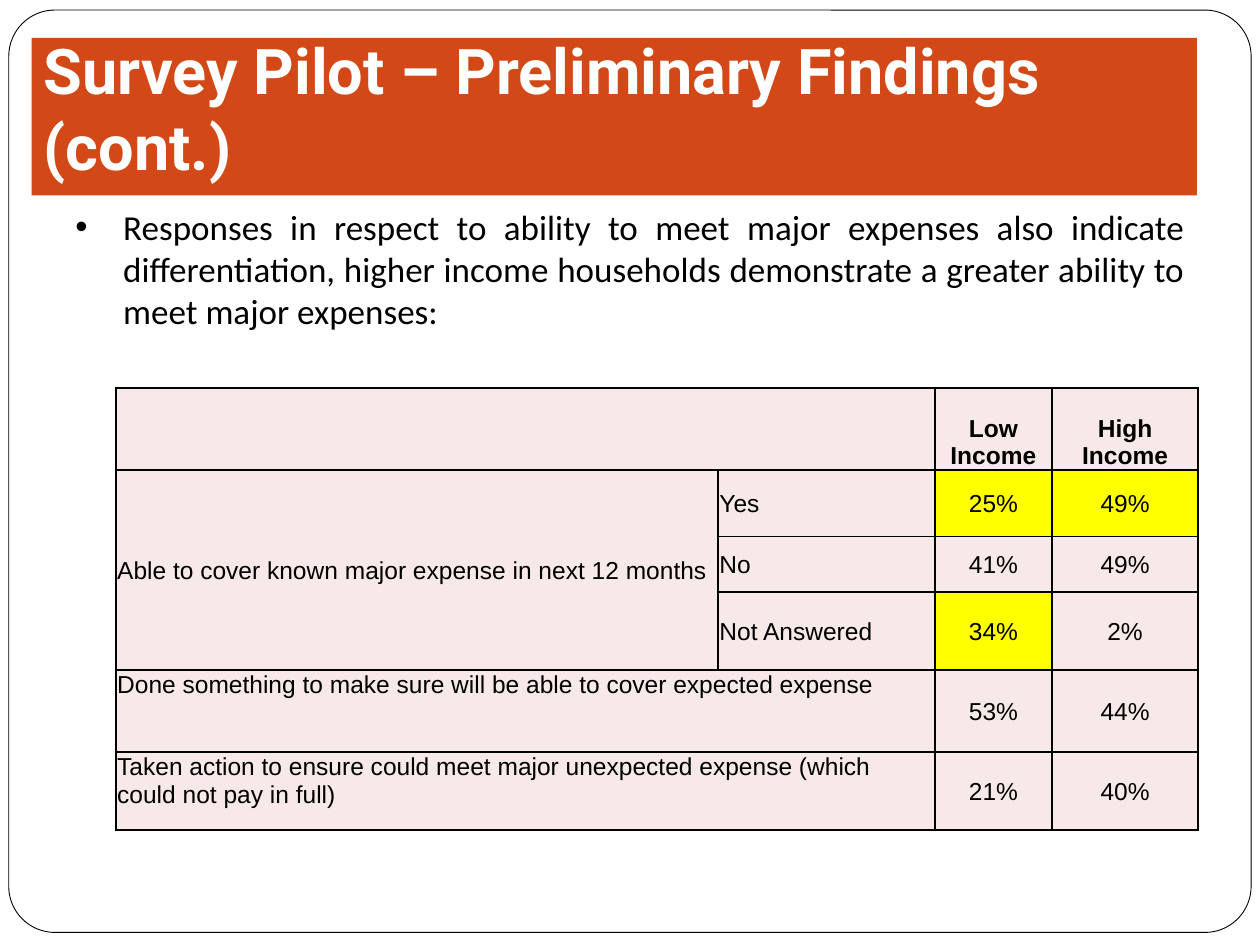
from typing import NamedTuple

from lxml import etree
from pptx import Presentation
from pptx.dml.color import RGBColor
from pptx.enum.shapes import MSO_SHAPE
from pptx.enum.text import MSO_ANCHOR, PP_ALIGN
from pptx.oxml.ns import qn
from pptx.util import Inches, Pt

LEFT, CENTER, JUSTIFY = PP_ALIGN.LEFT, PP_ALIGN.CENTER, PP_ALIGN.JUSTIFY
TOP, MIDDLE, BOTTOM = MSO_ANCHOR.TOP, MSO_ANCHOR.MIDDLE, MSO_ANCHOR.BOTTOM
RECT, ROUND_RECT = MSO_SHAPE.RECTANGLE, MSO_SHAPE.ROUNDED_RECTANGLE

COLORS = {"paper": "FFFFFF", "ink": "000000", "banner": "D34817",
          "cell": "F7E9E8", "highlight": "FFFF00"}

COL_WIDTHS = (4.78, 1.72, 0.93, 1.16)
ROW_HEIGHTS = (0.65, 0.53, 0.44, 0.62, 0.65, 0.62)


class Row(NamedTuple):
    question: str
    answer: str
    low: str
    high: str


ROWS = (
    Row("", "", "Low Income", "High Income"),
    Row("Able to cover known major expense in next 12 months", "Yes", "25%", "49%"),
    Row("", "No", "41%", "49%"),
    Row("", "Not Answered", "34%", "2%"),
    Row("Done something to make sure will be able to cover expected expense",
        "", "53%", "44%"),
    Row("Taken action to ensure could meet major unexpected expense "
        "(which could not pay in full)", "", "21%", "40%"),
)
HIGHLIGHTS = {(1, 2), (1, 3), (3, 2)}
WIDE_ROWS = (0, 4, 5)  # question spans the answer column


def rgb(name: str) -> RGBColor:
    return RGBColor.from_string(COLORS[name])


def add_box(s, kind, x: float, y: float, w: float, h: float, fill: str):
    sp = s.shapes.add_shape(kind, Inches(x), Inches(y), Inches(w), Inches(h))
    sp.shadow.inherit = False
    sp.fill.solid()
    sp.fill.fore_color.rgb = rgb(fill)
    sp.line.fill.background()
    return sp


def add_run(p, text: str, font: str, size: float, color: str = "ink",
            bold: bool = False) -> None:
    r = p.add_run()
    r.text = text
    r.font.name, r.font.size, r.font.bold = font, Pt(size), bold
    r.font.color.rgb = rgb(color)


def set_bullet(p, indent: float) -> None:
    pPr = p._p.get_or_add_pPr()
    pPr.set("marL", str(Inches(indent)))
    pPr.set("indent", str(-Inches(indent)))
    etree.SubElement(pPr, qn("a:buFont")).set("typeface", "Arial")
    etree.SubElement(pPr, qn("a:buChar")).set("char", "•")


def set_borders(cell, width: float = 1) -> None:
    tcPr = cell._tc.get_or_add_tcPr()
    for side in ("lnL", "lnR", "lnT", "lnB"):
        ln = etree.SubElement(tcPr, qn(f"a:{side}"), w=str(Pt(width)))
        fill = etree.SubElement(ln, qn("a:solidFill"))
        etree.SubElement(fill, qn("a:srgbClr"), val=COLORS["ink"])


def fill_cell(cell, row: int, col: int, text: str) -> None:
    set_borders(cell)
    cell.fill.solid()
    cell.fill.fore_color.rgb = rgb("highlight" if (row, col) in HIGHLIGHTS else "cell")
    cell.margin_left = cell.margin_right = cell.margin_top = Inches(0.01)
    cell.margin_bottom = 0
    if row == 0:
        cell.vertical_anchor = BOTTOM
    else:
        cell.vertical_anchor = TOP if col == 0 and row in WIDE_ROWS else MIDDLE
    if text:
        p = cell.text_frame.paragraphs[0]
        p.alignment = CENTER if col >= 2 else LEFT
        add_run(p, text, "Arial", 14, bold=row == 0)


def add_findings_table(s, x: float, y: float) -> None:
    tbl = s.shapes.add_table(len(ROWS), len(COL_WIDTHS), Inches(x), Inches(y),
                             Inches(sum(COL_WIDTHS)), Inches(sum(ROW_HEIGHTS))).table
    tbl.first_row = tbl.horz_banding = False
    for col, width in zip(tbl.columns, COL_WIDTHS):
        col.width = Inches(width)
    for row, height in zip(tbl.rows, ROW_HEIGHTS):
        row.height = Inches(height)
    for i, row in enumerate(ROWS):
        for j, text in enumerate(row):
            fill_cell(tbl.cell(i, j), i, j, text)
    for i in WIDE_ROWS:
        tbl.cell(i, 0).merge(tbl.cell(i, 1))
    tbl.cell(1, 0).merge(tbl.cell(3, 0))


def main() -> None:
    prs = Presentation()
    prs.slide_width, prs.slide_height = Inches(10), Inches(7.5)
    s = prs.slides.add_slide(prs.slide_layouts[6])

    # Rounded page frame
    frame = add_box(s, ROUND_RECT, 0.07, 0.08, 9.86, 7.32, "paper")
    frame.adjustments[0] = 0.05
    frame.line.color.rgb = rgb("ink")
    frame.line.width = Pt(0.5)

    # Bulleted finding
    tf = s.shapes.add_textbox(Inches(0.5), Inches(1.58), Inches(9), Inches(1.3)).text_frame
    tf.word_wrap = True
    p = tf.paragraphs[0]
    p.alignment = JUSTIFY
    p.space_before = Pt(4)
    set_bullet(p, 0.38)
    add_run(p, "Responses in respect to ability to meet major expenses also indicate "
               "differentiation, higher income households demonstrate a greater "
               "ability to meet major expenses:", "Calibri", 20)

    # Title banner
    tf = add_box(s, RECT, 0.25, 0.3, 9.25, 1.25, "banner").text_frame
    tf.word_wrap = True
    tf.vertical_anchor = BOTTOM
    tf.margin_bottom = Inches(0.1)
    p = tf.paragraphs[0]
    p.alignment = LEFT
    add_run(p, "Survey Pilot – Preliminary Findings (cont.)", "Roboto", 36, "paper", True)

    # Results by income group
    add_findings_table(s, 0.92, 3.08)

    prs.save("out.pptx")


if __name__ == "__main__":
    main()
